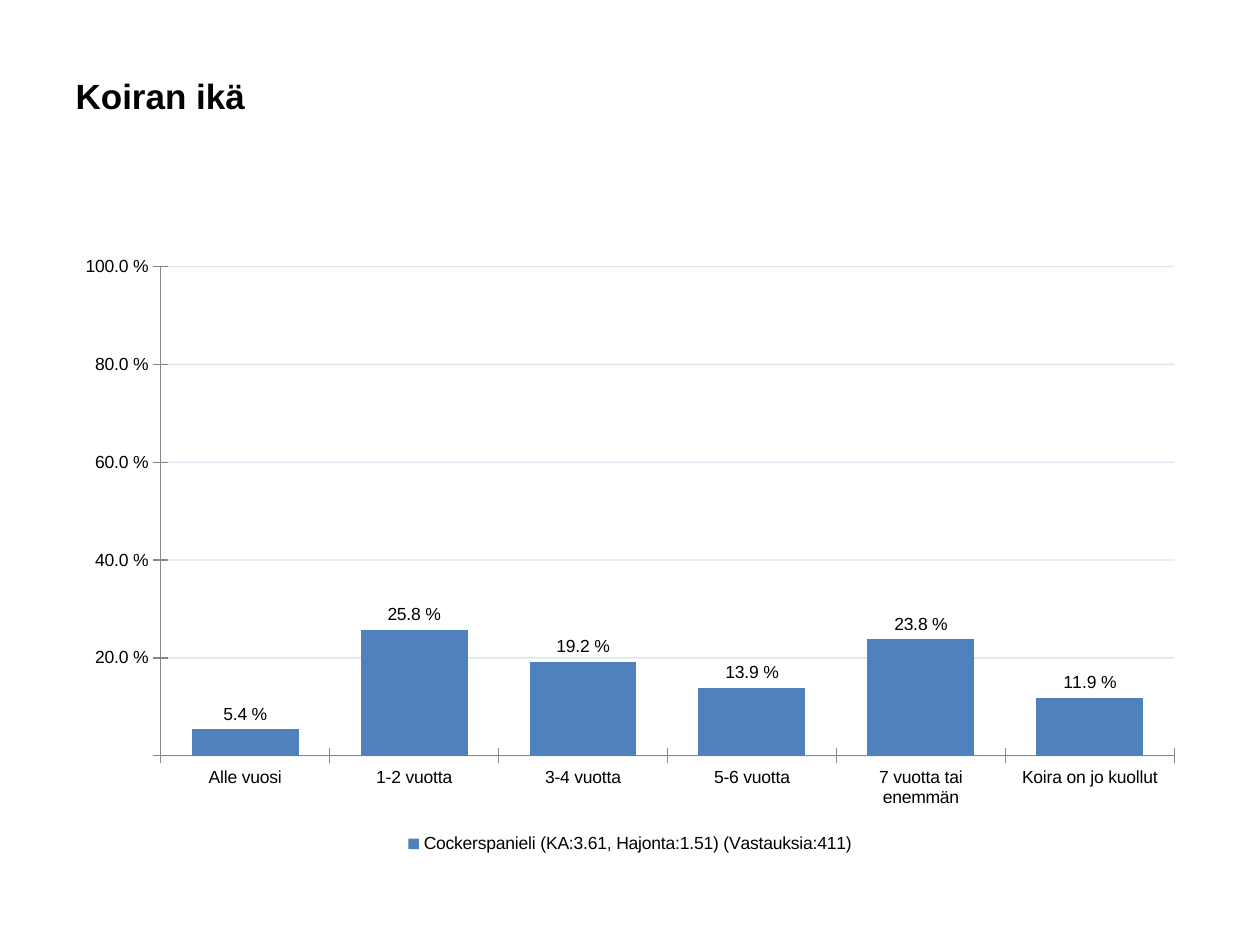
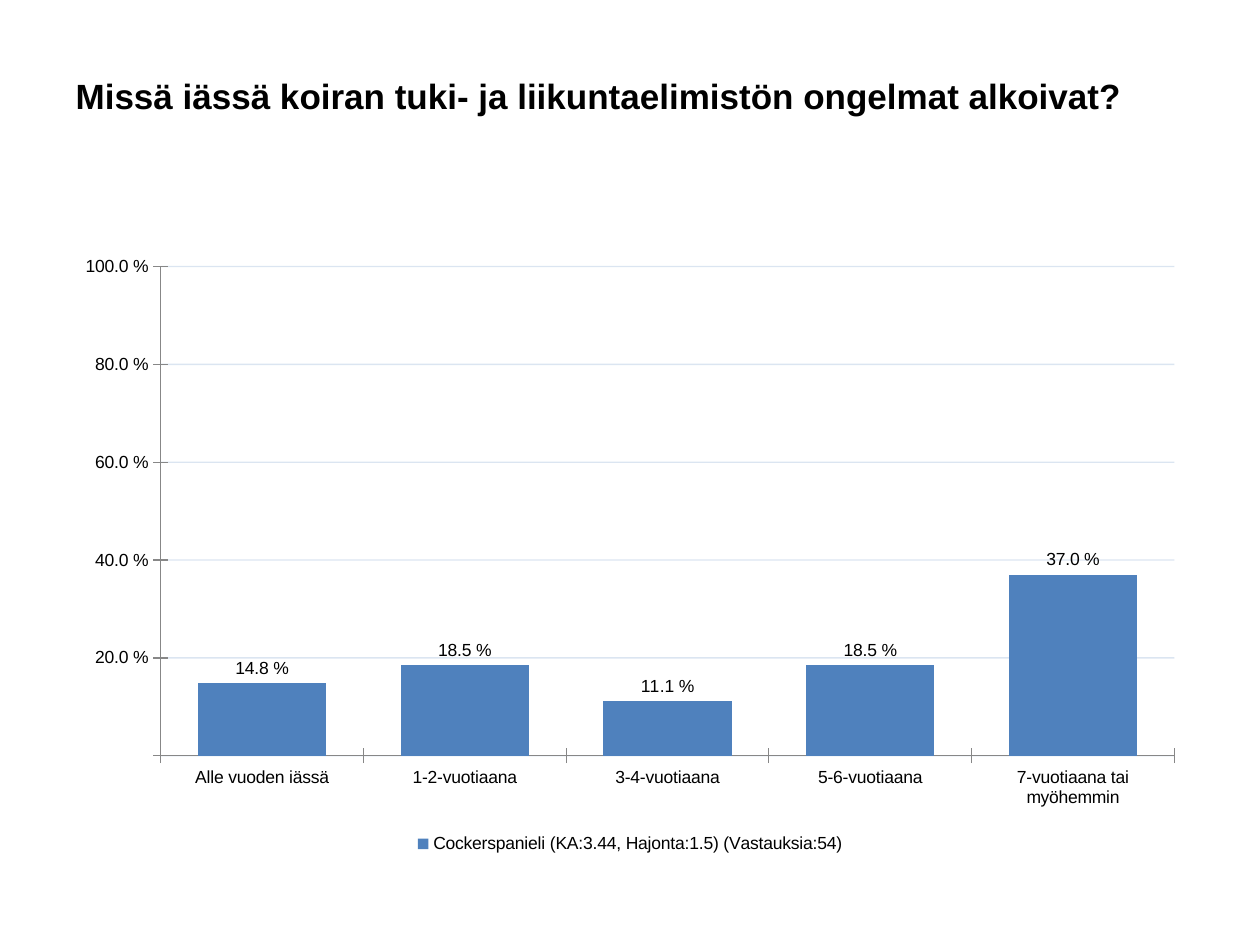
from pptx import Presentation
from pptx.chart.data import CategoryChartData as Data
from pptx.dml.color import RGBColor as RGB
from pptx.enum.chart import XL_CHART_TYPE as Kind, XL_LABEL_POSITION as Spot
from pptx.enum.chart import XL_LEGEND_POSITION as Side, XL_TICK_MARK as Tick
from pptx.enum.text import MSO_ANCHOR as Anchor, MSO_AUTO_SIZE as Fit, PP_ALIGN as Align
from pptx.oxml.xmlchemy import OxmlElement as Tag
from pptx.util import Inches, Pt

BLUE, BLACK, GREY = "4F81BD", "000000", "878787"
FORM = r"0.0\ %;;;"


def paint(color, code):
    color.rgb = RGB.from_string(code)


def style(font, size=10, bold=False, face="Arial"):
    font.name, font.size, font.bold = face, Pt(size), bold
    paint(font.color, BLACK)


polls = [
    ("Koiran ikä",
     "Cockerspanieli (KA:3.61, Hajonta:1.51) (Vastauksia:411)",
     {"Alle vuosi": 0.054, "1-2 vuotta": 0.258, "3-4 vuotta": 0.192,
      "5-6 vuotta": 0.139, "7 vuotta tai enemmän": 0.238,
      "Koira on jo kuollut": 0.119}),
    ("Missä iässä koiran tuki- ja liikuntaelimistön ongelmat alkoivat?",
     "Cockerspanieli (KA:3.44, Hajonta:1.5) (Vastauksia:54)",
     {"Alle vuoden iässä": 0.148, "1-2-vuotiaana": 0.185,
      "3-4-vuotiaana": 0.111, "5-6-vuotiaana": 0.185,
      "7-vuotiaana tai myöhemmin": 0.37}),
]

deck = Presentation()
deck.slide_width, deck.slide_height = Inches(10), Inches(7.5)
wide, high = deck.slide_width, deck.slide_height
left, width = int(wide * 0.05), int(wide * 0.9)

for head, name, shares in polls:
    slide = deck.slides.add_slide(deck.slide_layouts[5])

    title = slide.shapes.title
    title.left, title.width = left, width
    title.top, title.height = Inches(0.36), Inches(0.79)
    frame = title.text_frame
    frame.text = head
    frame.word_wrap = True
    frame.auto_size = Fit.NONE
    frame.vertical_anchor = Anchor.MIDDLE
    para = frame.paragraphs[0]
    para.alignment = Align.LEFT
    style(para.font, 20, True)

    data = Data(number_format=FORM)
    data.categories = list(shares)
    data.add_series(name, list(shares.values()))
    chart = slide.shapes.add_chart(
        Kind.COLUMN_CLUSTERED, left, Inches(1.94), width, int(high * 0.65), data).chart
    style(chart.font, face="Calibri")
    chart.has_title = False
    chart.has_legend = True
    chart.legend.position = Side.BOTTOM
    chart.legend.include_in_layout = False
    style(chart.legend.font)

    for axis in (chart.category_axis, chart.value_axis):
        axis.major_tick_mark = Tick.CROSS
        axis.minor_tick_mark = Tick.NONE
        paint(axis.format.line.color, GREY)
        axis.format.line.width = Pt(0.75)
        labels = axis.tick_labels
        labels.number_format, labels.number_format_is_linked = FORM, False
        style(labels.font)

    scale = chart.value_axis
    scale.minimum_scale, scale.maximum_scale, scale.major_unit = 0, 1, 0.2
    scale.has_major_gridlines = True
    grid = scale.major_gridlines.format.line
    grid.width = Pt(0.75)
    paint(grid.color, BLUE)
    # Gridlines are the bar colour at 20 % opacity
    alpha = Tag("a:alpha")
    alpha.set("val", "20000")
    scale.major_gridlines._xAx.xpath("./c:majorGridlines//a:srgbClr")[0].append(alpha)

    plot = chart.plots[0]
    plot.gap_width = 58
    plot.vary_by_categories = False
    bars = plot.series[0]
    bars.format.fill.solid()
    paint(bars.format.fill.fore_color, BLUE)
    tags = bars.data_labels
    tags.show_value = True
    tags.position = Spot.OUTSIDE_END
    tags.number_format, tags.number_format_is_linked = FORM, False
    style(tags.font)

deck.save("out.pptx")
